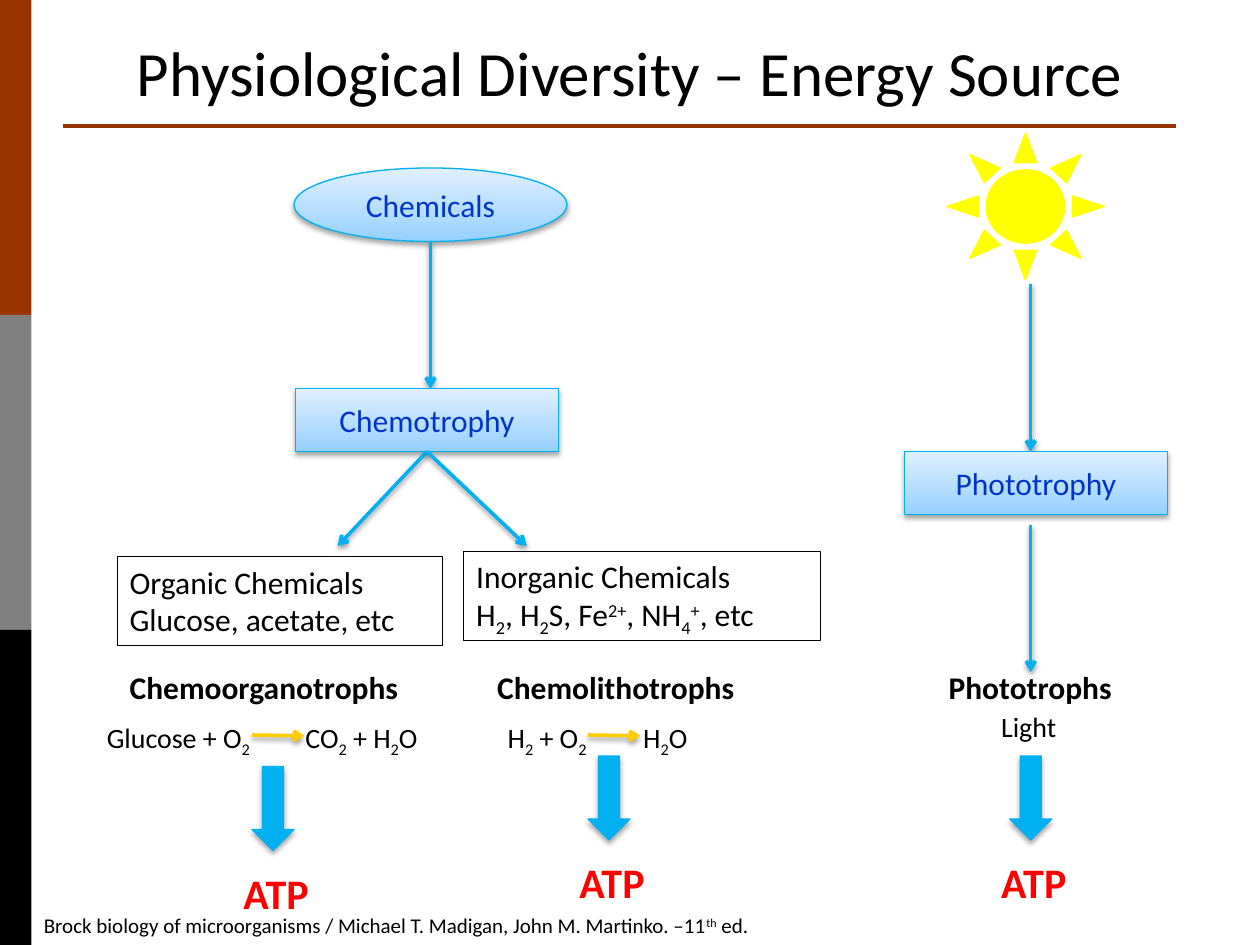
import pptx
import pptx.dml.color
import pptx.enum.shapes
import pptx.enum.text
import pptx.oxml
import pptx.oxml.ns
import pptx.util
import lxml.etree

Pt = pptx.util.Pt
RGBColor = pptx.dml.color.RGBColor
SHAPE = pptx.enum.shapes.MSO_SHAPE
ALIGN = pptx.enum.text.PP_ALIGN
ANCHOR = pptx.enum.text.MSO_ANCHOR
AUTO_SIZE = pptx.enum.text.MSO_AUTO_SIZE

RUST = RGBColor(0x99, 0x33, 0x00)
GREY = RGBColor(0x80, 0x80, 0x80)
BLACK = RGBColor(0x00, 0x00, 0x00)
SKY = RGBColor(0x00, 0xB0, 0xF0)
PALE_BLUE = RGBColor(0xE0, 0xEF, 0xFF)
LIGHT_BLUE = RGBColor(0x96, 0xD0, 0xFF)
DEEP_BLUE = RGBColor(0x00, 0x33, 0xCC)
GOLD = RGBColor(0xFF, 0xCC, 0x00)
YELLOW = RGBColor(0xFF, 0xFF, 0x00)
RED = RGBColor(0xFF, 0x00, 0x00)

BODY = {"name": "Calibri", "size": Pt(18), "color": BLACK}
TITLE = {**BODY, "size": Pt(36)}
NODE = {**BODY, "color": DEEP_BLUE}
GROUP = {**BODY, "bold": True}
EQUATION = {**BODY, "size": Pt(16)}
PRODUCT = {**BODY, "size": Pt(24), "color": RED, "bold": True}
CITATION = {**BODY, "size": Pt(12)}

BASELINES = {"_": "-25000", "^": "30000"}
NODE_WIDTH, NODE_HEIGHT = 150, 36


def add_effects(properties, alpha=None):
    for effects in properties.findall(pptx.oxml.ns.qn("a:effectLst")):
        properties.remove(effects)
    effects = lxml.etree.SubElement(properties, pptx.oxml.ns.qn("a:effectLst"))
    if alpha:
        effects.append(pptx.oxml.parse_xml(
            f'<a:outerShdw {pptx.oxml.ns.nsdecls("a")} blurRad="{Pt(3.1)}" dist="{Pt(1.8)}" '
            'dir="5400000" rotWithShape="0"><a:srgbClr val="000000">'
            f'<a:alpha val="{alpha}000"/></a:srgbClr></a:outerShdw>'))


def write_paragraph(paragraph, text, style, alignment, tab=None):
    paragraph.alignment = alignment
    if tab:
        tabs = lxml.etree.SubElement(
            paragraph._p.get_or_add_pPr(), pptx.oxml.ns.qn("a:tabLst"))
        lxml.etree.SubElement(
            tabs, pptx.oxml.ns.qn("a:tab"), pos=str(Pt(tab)), algn="l")
    for part in text.split("|"):
        run = paragraph.add_run()
        run.text = part.lstrip("_^")
        for name, value in style.items():
            if name == "color":
                run.font.color.rgb = value
            else:
                setattr(run.font, name, value)
        if part[0] in BASELINES:
            run._r.get_or_add_rPr().set("baseline", BASELINES[part[0]])


def write_text(shape, lines, style, alignment=ALIGN.LEFT, anchor=ANCHOR.TOP, tab=None):
    frame = shape.text_frame
    frame.word_wrap = True
    frame.auto_size = AUTO_SIZE.NONE
    frame.vertical_anchor = anchor
    for index, line in enumerate(lines):
        paragraph = frame.add_paragraph() if index else frame.paragraphs[0]
        write_paragraph(paragraph, line, style, alignment, tab)


def add_label(slide, left, top, width, height, text, style, tab=None):
    label = slide.shapes.add_textbox(Pt(left), Pt(top), Pt(width), Pt(height))
    write_text(label, [text], style, tab=tab)


def add_figure(slide, kind, left, top, width, height, fill=None, line=None, shadow=False):
    shape = slide.shapes.add_shape(kind, Pt(left), Pt(top), Pt(width), Pt(height))
    if fill is None:
        shape.fill.background()
    else:
        shape.fill.solid()
        shape.fill.fore_color.rgb = fill
    if line is None:
        shape.line.fill.background()
    else:
        shape.line.color.rgb = line
        shape.line.width = Pt(0.75)
    add_effects(shape._element.spPr, 35 if shadow else None)
    return shape


def add_node(slide, kind, left, top, width, height, text):
    node = add_figure(slide, kind, left, top, width, height, SKY, SKY, shadow=True)
    node.fill.gradient()
    node.fill.gradient_angle = 90
    for stop, color in zip(node.fill.gradient_stops, (LIGHT_BLUE, PALE_BLUE)):
        stop.color.rgb = color
    write_text(node, [text], NODE, ALIGN.CENTER, ANCHOR.MIDDLE)


def add_line(slide, start, end, color, width=2, arrow=True):
    line = slide.shapes.add_connector(
        pptx.enum.shapes.MSO_CONNECTOR.STRAIGHT, *(Pt(value) for value in (*start, *end)))
    line.line.color.rgb = color
    line.line.width = Pt(width)
    if arrow:
        lxml.etree.SubElement(
            line.line._get_or_add_ln(), pptx.oxml.ns.qn("a:tailEnd"), type="arrow")
    add_effects(line._element.spPr, 38 if arrow else None)


def draw_side_band(slide, left, top, width, height):
    for index, color in enumerate((RUST, GREY, BLACK)):
        add_figure(slide, SHAPE.RECTANGLE, left, top + index * height / 3,
                   width, height / 3, color)


def draw_title(slide, left, top, width, height):
    title = slide.shapes.title
    box = {"left": left, "top": top, "width": width, "height": height}
    for name, value in box.items():
        setattr(title, name, Pt(value))
    write_text(title, ["Physiological Diversity – Energy Source"], TITLE,
               ALIGN.CENTER, ANCHOR.BOTTOM)
    add_line(slide, (left, top + 72), (left + 636, top + 72), RUST, 2.25, arrow=False)


def draw_atp_yield(slide, left, top):
    add_figure(slide, SHAPE.DOWN_ARROW, left, top, 24, 48, SKY, SKY, shadow=True)
    add_label(slide, left - 12, top + 54, 66, 36, "ATP", PRODUCT)


def draw_chemotrophy(slide, left, top):
    center = left + 190
    node_top = top + 126
    fork = (center, node_top + NODE_HEIGHT)
    add_node(slide, SHAPE.OVAL, left + 114, top, 156, 42, "Chemicals")
    add_line(slide, (left + 192, top + 42), (left + 192, node_top), SKY)
    add_node(slide, SHAPE.RECTANGLE, left + 115, node_top,
             NODE_WIDTH, NODE_HEIGHT, "Chemotrophy")
    for tip in (left + 139, left + 247):
        add_line(slide, fork, (tip, top + 216), SKY)


def draw_chemical_branch(slide, left, top, width, lines, group, group_left,
                         equation, equation_left, tab, arrow_left, atp_top):
    box = add_figure(slide, SHAPE.RECTANGLE, left, top, width, 51, line=BLACK)
    write_text(box, lines, BODY)
    add_label(slide, group_left, 378, 234, 29, group, GROUP)
    add_label(slide, equation_left, 408, 277, 27, equation, EQUATION, tab)
    add_line(slide, (arrow_left, 420), (arrow_left + 30, 420.5), GOLD)
    draw_atp_yield(slide, arrow_left, atp_top)


def draw_phototrophy(slide, left, top):
    center = left + 72
    add_figure(slide, SHAPE.SUN, left + 24, top, 90, 84, YELLOW, YELLOW)
    add_line(slide, (center, top + 86), (center, top + 182), SKY)
    add_node(slide, SHAPE.RECTANGLE, left, top + 182, NODE_WIDTH, NODE_HEIGHT, "Phototrophy")
    add_line(slide, (center, top + 224), (center, top + 308), SKY)
    add_label(slide, left + 18, top + 302, 144, 29, "Phototrophs", GROUP)
    add_label(slide, left + 48, top + 326, 66, 27, "Light", EQUATION)
    draw_atp_yield(slide, left + 60, top + 356)


def main():
    presentation = pptx.Presentation()
    presentation.slide_width = Pt(720)
    presentation.slide_height = Pt(540)
    slide = presentation.slides.add_slide(presentation.slide_layouts[5])
    draw_side_band(slide, 0, 0, 18, 540)
    draw_title(slide, 36, 0, 648, 66)
    draw_chemotrophy(slide, 54, 96)
    draw_chemical_branch(
        slide, 67, 318, 186, ["Organic Chemicals", "Glucose, acetate, etc"],
        "Chemoorganotrophs", 67, "Glucose + O|_2|\tCO|_2| + H|_2|O", 54, 113.5, 144, 438)
    draw_chemical_branch(
        slide, 265, 315, 204,
        ["Inorganic Chemicals", "H|_2|, H|_2|S, Fe|^2+|, NH|_4|^+|, etc"],
        "Chemolithotrophs", 277, "H|_2| + O|_2|\tH|_2|O", 283, 77.5, 336, 432)
    draw_phototrophy(slide, 517, 76)
    add_label(slide, 18, 518, 474, 22,
              "Brock biology of microorganisms / Michael T. Madigan, "
              "John M. Martinko. –11|^th| ed.", CITATION)
    presentation.save("out.pptx")


if __name__ == "__main__":
    main()
